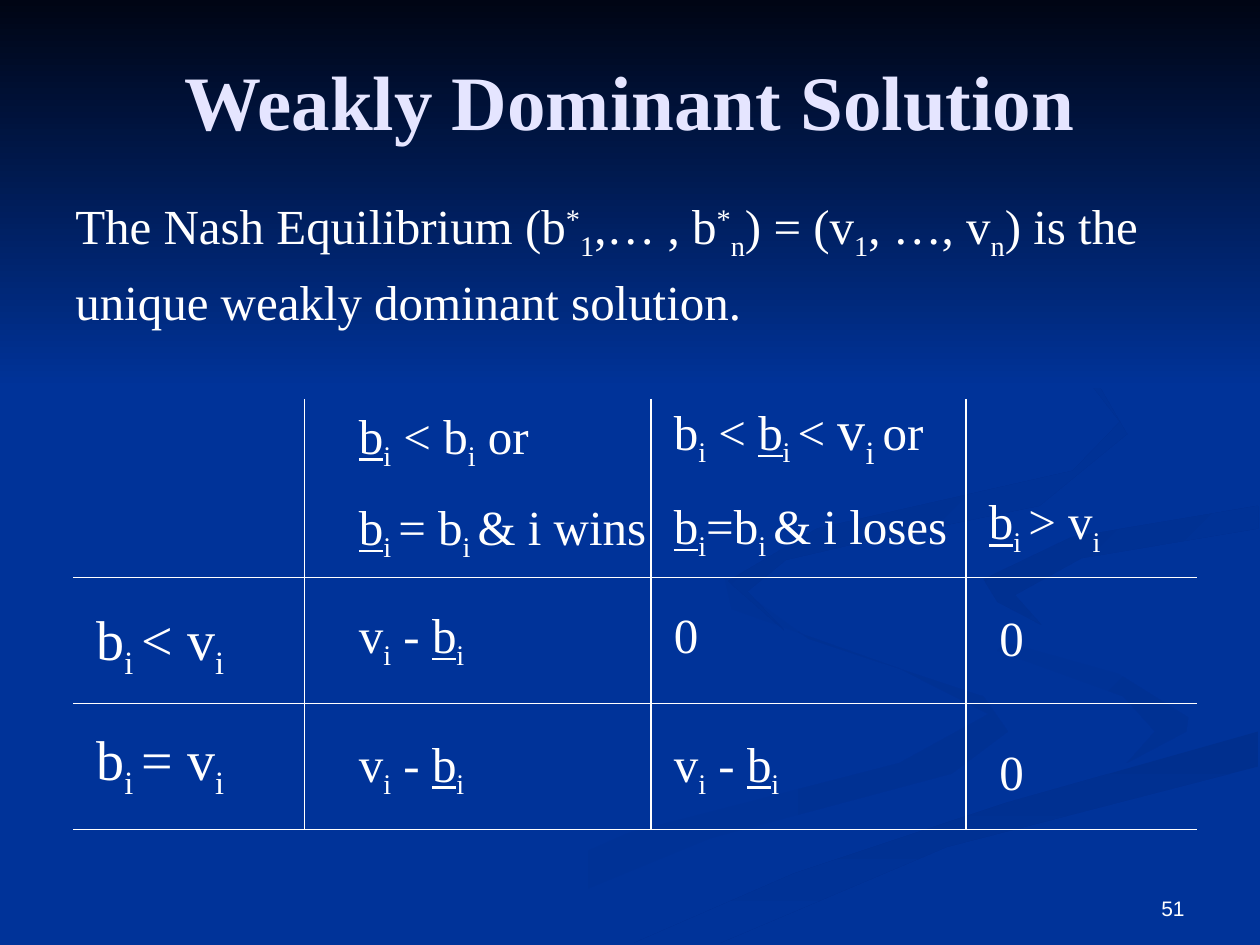
from lxml import etree
from pptx import Presentation
from pptx import util as u
from pptx.dml import color
from pptx.enum import shapes, text
from pptx.oxml import ns

Pt = u.Pt
SERIF = "Times New Roman"
WHITE, LILAC, BLUE, NIGHT, SHADE = "FFFFFF", "E5E5FF", "003399", "000514", "002F8E"
BASELINES = {"sub": "-25000", "sup": "30000"}

# Formula pieces: (text, style)
B = ("b", "under")
I, I_ = ("i", "sub"), ("i ", "sub")
ONE, N, STAR = ("1", "sub"), ("n", "sub"), ("*", "sup")
GAIN = ["v", I, " - ", B, I]

# Background ribbons: start colour, end colour, angle, outline
RIBBONS = [
    (BLUE, "003193", 0, [
        (562, 398), (462, 365), (414, 330), (418, 348), (514, 382), (565, 408),
        (514, 436), (359, 476), (216, 539), (260, 539), (406, 479), (544, 442),
        (576, 418)]),
    (BLUE, "003193", 45, [
        (679, 410), (639, 385), (557, 362), (521, 334), (537, 360), (642, 398),
        (660, 418), (644, 436), (678, 418)]),
    (SHADE, BLUE, 90, [
        (362, 539), (411, 539), (541, 484), (719, 438), (719, 418), (574, 459),
        (454, 499)]),
    (SHADE, BLUE, 45, [
        (562, 331), (570, 344), (595, 357), (580, 340), (618, 319), (719, 302),
        (719, 289), (612, 307)]),
    (SHADE, BLUE, 45, [
        (492, 310), (594, 289), (644, 248), (622, 210), (549, 168), (609, 201),
        (640, 241), (613, 269), (467, 302), (416, 332), (448, 360), (427, 338),
        (449, 320)]),
]


def rgb(value):
    return color.RGBColor.from_string(value)


def paint(sp, start, end, angle):
    """Fill with a linear gradient turned clockwise by angle."""
    sp.shadow.inherit = False
    sp.line.fill.background()
    sp.fill.gradient()
    sp.fill.gradient_angle = -angle % 360
    for stop, value in zip(sp.fill.gradient_stops, (start, end)):
        stop.color.rgb = rgb(value)


def add_ribbon(slide, start, end, angle, outline):
    builder = slide.shapes.build_freeform(*outline[0], scale=Pt(1))
    builder.add_line_segments(outline[1:], close=True)
    paint(builder.convert_to_shape(), start, end, angle)


def add_line(slide, x1, y1, x2, y2):
    line = slide.shapes.add_connector(
        shapes.MSO_CONNECTOR.STRAIGHT, Pt(x1), Pt(y1), Pt(x2), Pt(y2))
    line.line.color.rgb = rgb(WHITE)
    line.line.width = Pt(0.75)
    etree.SubElement(line._element.spPr, ns.qn("a:effectLst"))


def add_run(p, piece, size, font, fill, bold):
    """Add a plain string, or a (text, style) pair, with an optional third size."""
    content, style, *own_size = (piece, "") if isinstance(piece, str) else piece
    r = p.add_run()
    r.text = content
    r.font.size = Pt(own_size[0] if own_size else size)
    r.font.name = font
    r.font.bold = bold
    r.font.color.rgb = rgb(fill)
    if style == "under":
        r.font.underline = True
    elif style in BASELINES:
        r.font._element.set("baseline", BASELINES[style])


def add_text(slide, box, paragraphs, size=28, font=SERIF, fill=WHITE, bold=False,
             align=text.PP_ALIGN.LEFT, anchor=text.MSO_ANCHOR.TOP, gap=14, wrap=True):
    tf = slide.shapes.add_textbox(*map(Pt, box)).text_frame
    tf.word_wrap = wrap
    tf.vertical_anchor = anchor
    for index, pieces in enumerate(paragraphs):
        p = tf.add_paragraph() if index else tf.paragraphs[0]
        p.alignment = align
        if index:
            p.space_before = Pt(gap)
        for piece in pieces:
            add_run(p, piece, size, font, fill, bold)


def add_background(slide):
    slide.background.fill.solid()
    slide.background.fill.fore_color.rgb = rgb(BLUE)
    for ribbon in RIBBONS:
        add_ribbon(slide, *ribbon)
    sky = slide.shapes.add_shape(
        shapes.MSO_SHAPE.RECTANGLE, 0, 0, Pt(720), Pt(222))
    paint(sky, NIGHT, BLUE, 90)


def add_payoff_grid(slide):
    for y in (330, 402, 474):
        add_line(slide, 42, y, 684, y)
    for x in (174, 372, 552):
        add_line(slide, x, 228, x, 474)

    for y, sign in ((342, "< v"), (410.5, "= v")):
        add_text(slide, (48, y, 90, 45), [["b", I_, sign, I]], size=32, wrap=False)

    win, lose, zero = 198, 378, 564
    cells = [
        (win, 228, [[B, I, " < b", I, " or"],
                    [B, I_, "= b", I_, "& i wins"]]),
        (lose, 222, [["b", I, " < ", B, I_, "< ", ("v", "", 32),
                      ("i ", "sub", 32), "or"],
                     [B, I, "=b", I_, "& i loses"]]),
        (558, 277, [[B, I_, "> v", I]]),
        (win, 342, [GAIN]),
        (lose, 342, [["0"]]),
        (zero, 343.5, [["0"]]),
        (win, 415.5, [GAIN]),
        (lose, 415.5, [GAIN]),
        (zero, 420, [["0"]]),
    ]
    for x, y, paragraphs in cells:
        height = 41 if len(paragraphs) == 1 else 92
        add_text(slide, (x, y, 204, height), paragraphs)


def main():
    prs = Presentation()
    prs.slide_width, prs.slide_height = Pt(720), Pt(540)
    slide = prs.slides.add_slide(prs.slide_layouts[6])
    add_background(slide)
    add_text(slide, (36, 12, 648, 90), [["Weakly Dominant Solution"]], size=44,
             fill=LILAC, bold=True, align=text.PP_ALIGN.CENTER,
             anchor=text.MSO_ANCHOR.MIDDLE)
    add_text(slide, (36, 108, 648, 356), [
        ["The Nash Equilibrium (b", STAR, ONE, ",… , b", STAR, N, ") = (v", ONE,
         ", …, v", N, ") is the"],
        ["unique weakly dominant solution."]], gap=5.6)
    add_payoff_grid(slide)
    add_text(slide, (516, 492, 168, 37.5), [["51"]], size=12, font="Arial",
             align=text.PP_ALIGN.RIGHT, anchor=text.MSO_ANCHOR.BOTTOM)
    prs.save("out.pptx")


if __name__ == "__main__":
    main()
